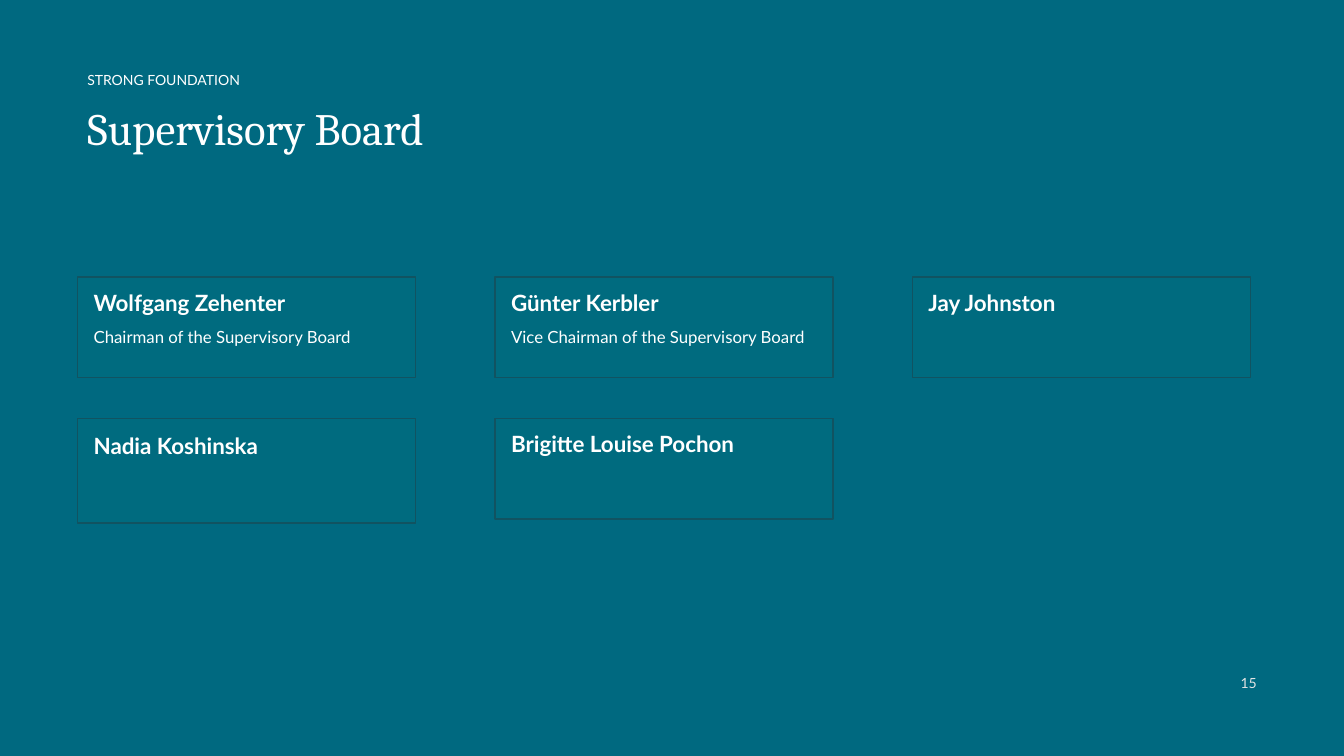
from dataclasses import dataclass

from pptx import Presentation, util as u
from pptx.dml.color import RGBColor as Rgb
from pptx.enum import shapes, text


@dataclass(frozen=True)
class Theme:
    """Colours, fonts and type sizes of the deck."""
    back: Rgb = Rgb.from_string("006980")
    card: Rgb = Rgb.from_string("006B7F")
    edge: Rgb = Rgb.from_string("115361")
    white: Rgb = Rgb.from_string("FFFFFF")
    pale: Rgb = Rgb.from_string("E3E4E4")
    serif: str = "Cambria"
    sans: str = "Lato"
    head: int = 32
    name: int = 16
    role: int = 12
    small: int = 10


THEME = Theme()
MEMBERS = [
    ("Wolfgang Zehenter", "Chairman of the Supervisory Board", 0),
    ("Günter Kerbler", "Vice Chairman of the Supervisory Board", 0),
    ("Jay Johnston", "", 0),
    ("Nadia Koshinska", "", 0.1),
    ("Brigitte Louise Pochon", "", 0),
]


def style(para, size, color=THEME.white, face=THEME.sans, bold=False):
    """Format every run of a paragraph."""
    for run in para.runs:
        font = run.font
        font.size, font.name, font.bold = u.Pt(size), face, bold
        font.color.rgb = color


def label(slide, box, words, color, align, anchor, space):
    """Place one small line of text in the box."""
    frame = slide.shapes.add_textbox(*map(u.Cm, box)).text_frame
    frame.word_wrap = True
    frame.vertical_anchor = anchor
    frame.text = words
    para = frame.paragraphs[0]
    para.alignment, para.line_spacing = align, space
    style(para, THEME.small, color)


def header(slide, box):
    """Place the small heading and the title below it."""
    left, top, width, height = box
    label(slide, (left, top, 14.4, 1.12), "STRONG FOUNDATION", THEME.white,
          text.PP_ALIGN.LEFT, text.MSO_ANCHOR.TOP, 1.2)
    title = slide.shapes.title
    title.left, title.top = u.Cm(left), u.Cm(top + 0.81)
    title.width, title.height = u.Cm(width), u.Cm(height - 0.81)
    frame = title.text_frame
    frame.text = "Supervisory Board"
    frame.auto_size = text.MSO_AUTO_SIZE.NONE
    frame.vertical_anchor = text.MSO_ANCHOR.TOP
    para = frame.paragraphs[0]
    para.alignment = text.PP_ALIGN.LEFT
    style(para, THEME.head, face=THEME.serif)


def card(slide, box, name, role, inset):
    """Draw one framed member with an optional role."""
    shape = slide.shapes.add_shape(shapes.MSO_SHAPE.RECTANGLE, *map(u.Cm, box))
    shape.shadow.inherit = False
    shape.fill.solid()
    shape.fill.fore_color.rgb = THEME.card
    shape.line.color.rgb = THEME.edge
    shape.line.width = u.Pt(1)
    frame = shape.text_frame
    frame.word_wrap = True
    frame.vertical_anchor = text.MSO_ANCHOR.TOP
    frame.margin_left, frame.margin_top = u.Cm(0.4), u.Cm(inset)
    frame.text = name
    first = frame.paragraphs[0]
    first.alignment = text.PP_ALIGN.LEFT
    style(first, THEME.name, bold=True)
    if role:
        second = frame.add_paragraph()
        second.text = role
        second.alignment = text.PP_ALIGN.LEFT
        second.line_spacing, second.space_before = 1.2, u.Pt(5)
        style(second, THEME.role)


def board(slide, box, cols=3, gap_x=2.01, gap_y=1.02, tall=2.54):
    """Lay the members out in a grid across the box width."""
    left, top, width = box
    wide = (width - gap_x * (cols - 1)) / cols
    for i, (name, role, extra) in enumerate(MEMBERS):
        row, col = divmod(i, cols)
        place = (left + col * (wide + gap_x), top + row * (tall + gap_y),
                 wide, tall + extra)
        card(slide, place, name, role, 0.3 + extra / 2)


def main():
    """Build and save the slide."""
    deck = Presentation()
    deck.slide_width, deck.slide_height = u.Cm(33.87), u.Cm(19.05)
    slide = deck.slides.add_slide(deck.slide_layouts[5])
    slide.background.fill.solid()
    slide.background.fill.fore_color.rgb = THEME.back
    header(slide, (1.95, 1.6, 20, 3.96))
    board(slide, (1.96, 6.98, 29.55))
    label(slide, (24.3, 16.89, 7.62, 0.66), "15", THEME.pale,
          text.PP_ALIGN.RIGHT, text.MSO_ANCHOR.MIDDLE, 1.0)
    deck.save("out.pptx")


if __name__ == "__main__":
    main()
